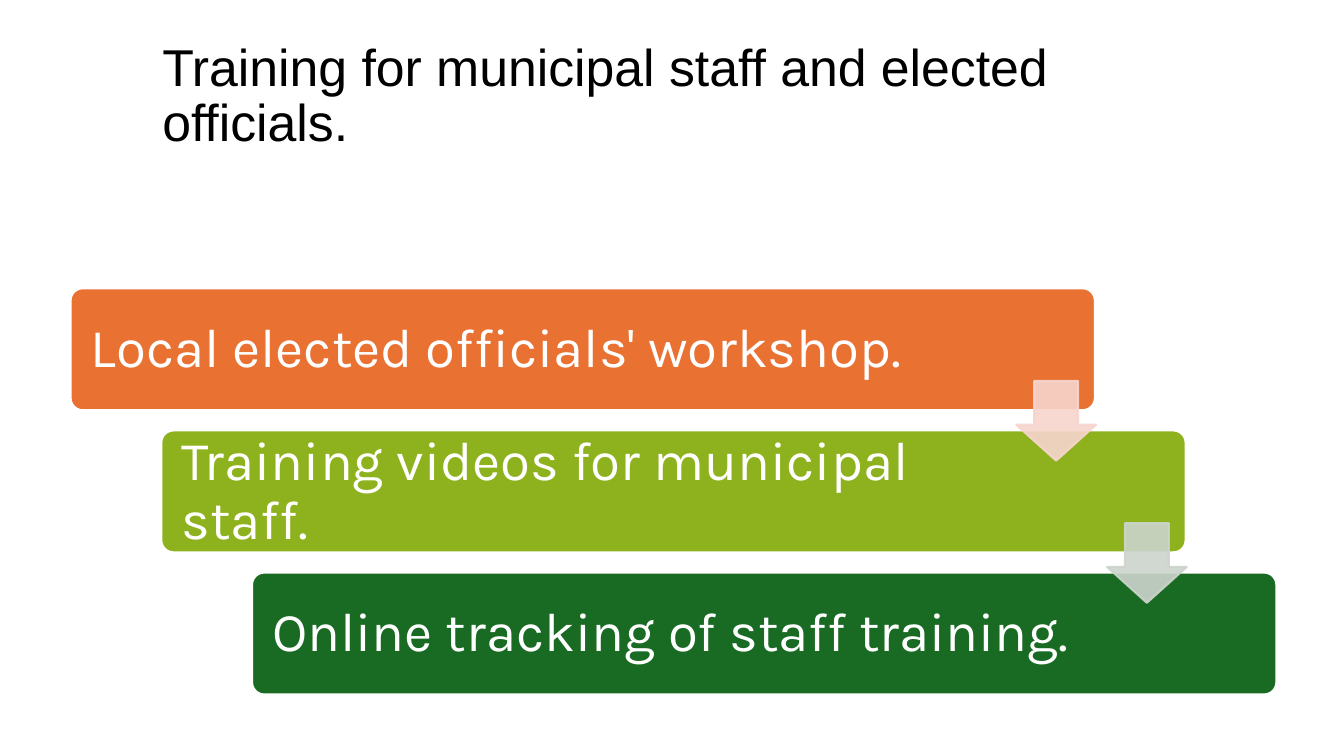
from lxml import etree
from pptx import Presentation
from pptx.dml.color import RGBColor
from pptx.enum.shapes import MSO_SHAPE
from pptx.enum.text import MSO_ANCHOR, MSO_AUTO_SIZE, PP_ALIGN
from pptx.oxml.ns import qn
from pptx.util import Inches, Pt

ROUNDED = MSO_SHAPE.ROUNDED_RECTANGLE
DOWN_ARROW = MSO_SHAPE.DOWN_ARROW
TOP, MIDDLE = MSO_ANCHOR.TOP, MSO_ANCHOR.MIDDLE
LEFT = PP_ALIGN.LEFT
NO_AUTOFIT = MSO_AUTO_SIZE.NONE

COLORS = {
    "black": "000000",
    "white": "FFFFFF",
    "orange": "E97132",
    "lime": "8EB21E",
    "green": "196B24",
    "pink": "F7D5CE",
    "gray": "CCD4CD",
}
TITLE = "Training for municipal staff and elected officials."
# text, bar colour, text width
STEPS = [
    ("Local elected officials' workshop.", "orange", 8.85),
    ("Training videos for municipal staff.", "lime", 8.4),
    ("Online tracking of staff training.", "green", 8.4),
]
ARROW_COLORS = ["pink", "gray"]

BAR_LEFT, BAR_TOP, BAR_WIDTH, BAR_HEIGHT = 0.7, 2.86, 10.16, 1.21
ARROW_LEFT, ARROW_TOP, ARROW_SIZE = 10.08, 3.78, 0.79
SHIFT_X, SHIFT_Y = 0.9, 1.41
TEXT_OFFSET, TEXT_HEIGHT = 0.04, 1.14


def rgb(name):
    return RGBColor.from_string(COLORS[name])


def write_text(shape, text, *, font, size, color, anchor, inset_x, inset_y):
    frame = shape.text_frame
    frame.word_wrap = True
    frame.auto_size = NO_AUTOFIT
    frame.vertical_anchor = anchor
    frame.margin_left = frame.margin_right = Inches(inset_x)
    frame.margin_top = frame.margin_bottom = Inches(inset_y)
    paragraph = frame.paragraphs[0]
    paragraph.alignment = LEFT
    paragraph.line_spacing = 0.9
    run = paragraph.add_run()
    run.text = text
    run.font.name = font
    run.font.size = Pt(size)
    run.font.color.rgb = rgb(color)


def add_filled_shape(slide, kind, box, adjustments, fill, line, opacity=100):
    shape = slide.shapes.add_shape(kind, *map(Inches, box))
    shape.shadow.inherit = False
    for index, value in enumerate(adjustments):
        shape.adjustments[index] = value
    shape.fill.solid()
    shape.fill.fore_color.rgb = rgb(fill)
    shape.line.color.rgb = rgb(line)
    shape.line.width = Pt(1.5)
    if opacity < 100:
        for color in shape._element.spPr.iter(qn("a:srgbClr")):
            etree.SubElement(color, qn("a:alpha"), val=str(opacity * 1000))


def main():
    presentation = Presentation()
    presentation.slide_width = Inches(13.33)
    presentation.slide_height = Inches(7.5)
    slide = presentation.slides.add_slide(presentation.slide_layouts[5])

    title = slide.shapes.title
    title.left, title.top = Inches(1.51), Inches(0.38)
    title.width, title.height = Inches(10.63), Inches(1.72)
    write_text(title, TITLE, font="Arial", size=37, color="black",
               anchor=TOP, inset_x=0.1, inset_y=0.03)

    for index, (text, color, text_width) in enumerate(STEPS):
        left = BAR_LEFT + index * SHIFT_X
        top = BAR_TOP + index * SHIFT_Y
        add_filled_shape(slide, ROUNDED, (left, top, BAR_WIDTH, BAR_HEIGHT),
                         [0.1], color, "white")
        text_box = slide.shapes.add_textbox(
            Inches(left + TEXT_OFFSET), Inches(top + TEXT_OFFSET),
            Inches(text_width), Inches(TEXT_HEIGHT))
        write_text(text_box, text, font="Karla", size=39, color="white",
                   anchor=MIDDLE, inset_x=0.16, inset_y=0.16)

    for index, color in enumerate(ARROW_COLORS):
        box = (ARROW_LEFT + index * SHIFT_X, ARROW_TOP + index * SHIFT_Y,
               ARROW_SIZE, ARROW_SIZE)
        add_filled_shape(slide, DOWN_ARROW, box, [0.55, 0.45],
                         color, color, opacity=90)

    presentation.save("out.pptx")


if __name__ == "__main__":
    main()
